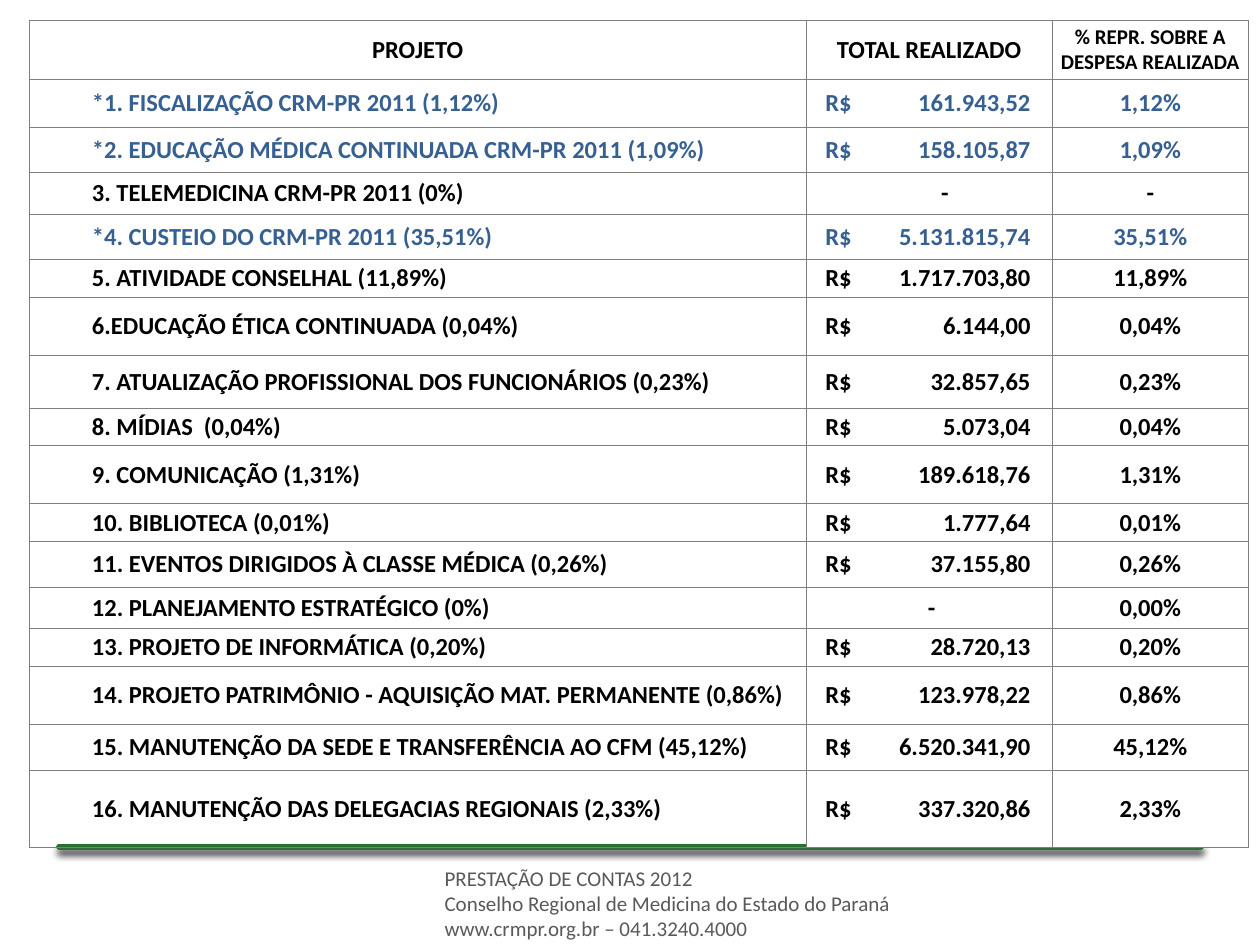
from dataclasses import dataclass

import pptx
import pptx.dml.color
import pptx.enum.shapes
import pptx.enum.text
import pptx.oxml
import pptx.oxml.ns
import pptx.util
from pptx.util import Inches

BLACK = "000000"
BLUE = "376092"
WHITE = "FFFFFF"
GRAY = "595959"
BORDER = "7F7F7F"
GREEN = "2C6E34"
NAMESPACE = pptx.oxml.ns.nsdecls("a")
ALIGN = pptx.enum.text.PP_ALIGN
COLUMN_WIDTHS = (6.17, 1.95, 1.56)
HEADER_HEIGHT = 0.47
AMOUNT_INSET = 0.15
AMOUNT_TAB = 1.63


@dataclass
class Project:
    name: str
    amount: str
    share: str
    height: float
    color: str = BLACK
    dash_inset: float = 0


PROJECTS = (
    Project("*1. FISCALIZAÇÃO CRM-PR 2011 (1,12%)", "161.943,52", "1,12%", 0.38, BLUE),
    Project("*2. EDUCAÇÃO MÉDICA CONTINUADA CRM-PR 2011 (1,09%)", "158.105,87", "1,09%", 0.36, BLUE),
    Project("3. TELEMEDICINA CRM-PR 2011 (0%)", "-", "-", 0.33, dash_inset=0.25),
    Project("*4. CUSTEIO DO CRM-PR 2011 (35,51%)", "5.131.815,74", "35,51%", 0.36, BLUE),
    Project("5. ATIVIDADE CONSELHAL (11,89%)", "1.717.703,80", "11,89%", 0.3),
    Project("6.EDUCAÇÃO ÉTICA CONTINUADA (0,04%)", "6.144,00", "0,04%", 0.46),
    Project("7. ATUALIZAÇÃO PROFISSIONAL DOS FUNCIONÁRIOS (0,23%)", "32.857,65", "0,23%", 0.42),
    Project("8. MÍDIAS  (0,04%)", "5.073,04", "0,04%", 0.3),
    Project("9. COMUNICAÇÃO (1,31%)", "189.618,76", "1,31%", 0.46),
    Project("10. BIBLIOTECA (0,01%)", "1.777,64", "0,01%", 0.3),
    Project("11. EVENTOS DIRIGIDOS À CLASSE MÉDICA (0,26%)", "37.155,80", "0,26%", 0.36),
    Project("12. PLANEJAMENTO ESTRATÉGICO (0%)", "-", "0,00%", 0.33, dash_inset=0.04),
    Project("13. PROJETO DE INFORMÁTICA (0,20%)", "28.720,13", "0,20%", 0.3),
    Project("14. PROJETO PATRIMÔNIO - AQUISIÇÃO MAT. PERMANENTE (0,86%)", "123.978,22", "0,86%", 0.46),
    Project("15. MANUTENÇÃO DA SEDE E TRANSFERÊNCIA AO CFM (45,12%)", "6.520.341,90", "45,12%", 0.37),
    Project("16. MANUTENÇÃO DAS DELEGACIAS REGIONAIS (2,33%)", "337.320,86", "2,33%", 0.61),
)


def rgb(value: str) -> pptx.dml.color.RGBColor:
    return pptx.dml.color.RGBColor.from_string(value)


def add_run(paragraph, text: str, size: float, color: str, bold: bool = False) -> None:
    run = paragraph.add_run()
    run.text = text
    run.font.name = "Calibri"
    run.font.size = pptx.util.Pt(size)
    run.font.bold = bold
    run.font.color.rgb = rgb(color)


def add_footer(slide) -> None:
    shape = slide.shapes.add_textbox(Inches(3.43), Inches(6.82), Inches(4.88), Inches(0.71))
    frame = shape.text_frame
    frame.word_wrap = True
    frame.auto_size = pptx.enum.text.MSO_AUTO_SIZE.SHAPE_TO_FIT_TEXT
    lines = (
        "PRESTAÇÃO DE CONTAS 2012",
        "Conselho Regional de Medicina do Estado do Paraná",
        "www.crmpr.org.br – 041.3240.4000",
    )
    for index, line in enumerate(lines):
        paragraph = frame.add_paragraph() if index else frame.paragraphs[0]
        add_run(paragraph, line, 12, GRAY)


def add_footer_line(slide) -> None:
    connector = slide.shapes.add_connector(
        pptx.enum.shapes.MSO_CONNECTOR.STRAIGHT,
        Inches(0.47), Inches(6.72), Inches(9.53), Inches(6.72),
    )
    connector.line.color.rgb = rgb(GREEN)
    connector.line.width = pptx.util.Pt(3.5)
    connector.line._get_or_add_ln().set("cap", "rnd")
    connector._element.spPr.append(pptx.oxml.parse_xml(
        f'<a:effectLst {NAMESPACE}><a:outerShdw blurRad="{pptx.util.Pt(4)}" '
        f'dist="{pptx.util.Pt(3)}" dir="5400000" rotWithShape="0">'
        f'<a:srgbClr val="{BLACK}"><a:alpha val="73000"/></a:srgbClr>'
        "</a:outerShdw></a:effectLst>"
    ))


def format_cell(cell, filled: bool) -> None:
    cell.margin_left = cell.margin_right = cell.margin_top = cell.margin_bottom = 0
    cell.vertical_anchor = pptx.enum.text.MSO_ANCHOR.MIDDLE
    properties = cell._tc.get_or_add_tcPr()
    for side in "LRTB":
        properties.append(pptx.oxml.parse_xml(
            f'<a:ln{side} {NAMESPACE} w="{pptx.util.Pt(0.5)}"><a:solidFill>'
            f'<a:srgbClr val="{BORDER}"/></a:solidFill></a:ln{side}>'
        ))
    if filled:
        cell.fill.solid()
        cell.fill.fore_color.rgb = rgb(WHITE)
    else:
        cell.fill.background()


def fill_header(cells) -> None:
    titles = (("PROJETO", 14), ("TOTAL REALIZADO", 14), ("% REPR. SOBRE A DESPESA REALIZADA", 12))
    for cell, (title, size) in zip(cells, titles):
        paragraph = cell.text_frame.paragraphs[0]
        paragraph.alignment = ALIGN.CENTER
        add_run(paragraph, title, size, BLACK, True)


def fill_project(cells, project: Project) -> None:
    name, amount, share = (cell.text_frame.paragraphs[0] for cell in cells)
    name.level = 1
    name_properties = name._p.get_or_add_pPr()
    name_properties.set("marL", str(Inches(0.5)))
    name_properties.set("indent", "0")
    add_run(name, project.name, 14, project.color, True)

    if project.amount == "-":
        amount.alignment = ALIGN.CENTER
        cells[1].margin_left = Inches(project.dash_inset)
        add_run(amount, project.amount, 14, project.color, True)
    else:
        amount.alignment = ALIGN.LEFT
        cells[1].margin_left = Inches(AMOUNT_INSET)
        amount._p.get_or_add_pPr().append(pptx.oxml.parse_xml(
            f'<a:tabLst {NAMESPACE}><a:tab pos="{Inches(AMOUNT_TAB)}" algn="r"/></a:tabLst>'
        ))
        add_run(amount, f"R$\t{project.amount}", 14, project.color, True)

    share.alignment = ALIGN.CENTER
    add_run(share, project.share, 14, project.color, True)


def add_project_table(slide) -> None:
    heights = [HEADER_HEIGHT, *(project.height for project in PROJECTS)]
    table = slide.shapes.add_table(
        len(heights), len(COLUMN_WIDTHS), Inches(0.23), Inches(0.16),
        Inches(sum(COLUMN_WIDTHS)), Inches(sum(heights)),
    ).table
    table.first_row = False
    table.horz_banding = False
    for column, width in zip(table.columns, COLUMN_WIDTHS):
        column.width = Inches(width)
    for index, (row, height) in enumerate(zip(table.rows, heights)):
        row.height = Inches(height)
        cells = list(row.cells)
        for column_index, cell in enumerate(cells):
            format_cell(cell, filled=column_index > 0)
        if index:
            fill_project(cells, PROJECTS[index - 1])
        else:
            fill_header(cells)


def main() -> None:
    presentation = pptx.Presentation()
    presentation.slide_width = Inches(10)
    presentation.slide_height = Inches(7.5)
    slide = presentation.slides.add_slide(presentation.slide_layouts[6])
    add_footer(slide)
    add_footer_line(slide)
    add_project_table(slide)
    presentation.save("out.pptx")


if __name__ == "__main__":
    main()
